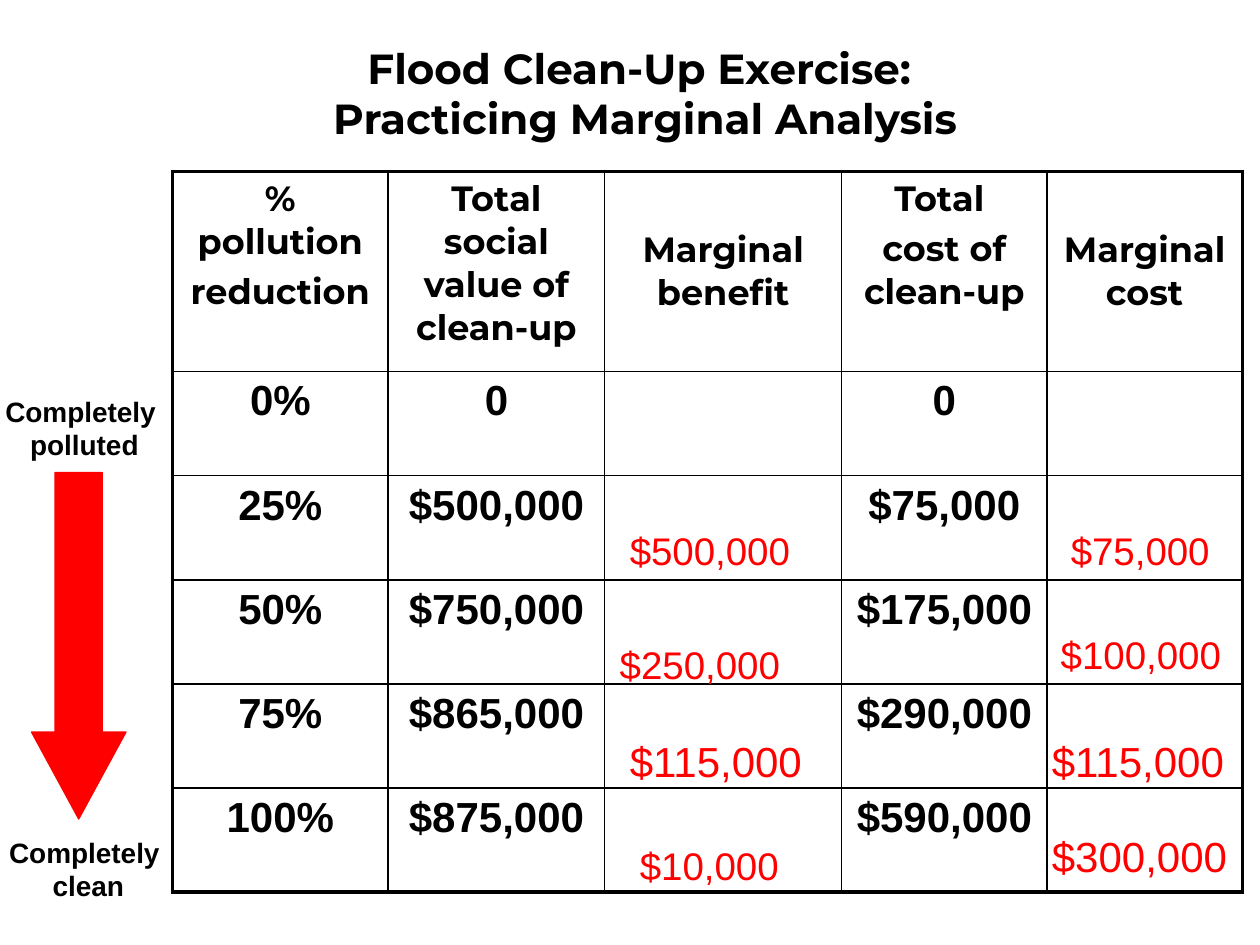
from lxml.etree import SubElement
from pptx import Presentation
from pptx.dml.color import RGBColor
from pptx.enum.shapes import MSO_SHAPE
from pptx.enum.text import MSO_ANCHOR, PP_ALIGN
from pptx.oxml.ns import qn
from pptx.util import Inches, Pt

BLACK = RGBColor(0, 0, 0)
RED = RGBColor(255, 0, 0)

TITLE = ["Flood Clean-Up Exercise: ", "Practicing Marginal Analysis"]
HEADERS = [
    (["% pollution", "reduction"], MSO_ANCHOR.TOP),
    (["Total social value of clean-up"], MSO_ANCHOR.TOP),
    (["Marginal benefit"], MSO_ANCHOR.MIDDLE),
    (["Total ", "cost of clean-up"], MSO_ANCHOR.TOP),
    (["Marginal cost"], MSO_ANCHOR.MIDDLE),
]
ROWS = [
    ("0%", "0", "", "0", ""),
    ("25%", "$500,000", "", "$75,000", ""),
    ("50%", "$750,000", "", "$175,000", ""),
    ("75%", "$865,000", "", "$290,000", ""),
    ("100%", "$875,000", "", "$590,000", ""),
]
COLUMN_WIDTHS = [1.71, 1.72, 1.88, 1.63, 1.55]
TABLE_LEFT, TABLE_TOP, TABLE_HEIGHT = 1.37, 1.36, 5.72
HEADER_HEIGHT = 1.59
ROW_HEIGHT = (TABLE_HEIGHT - HEADER_HEIGHT) / len(ROWS)

SCALE_LABELS = [
    (["Completely ", "polluted"], -0.33, 3.08, 2),
    (["Completely", " clean"], -0.03, 6.58, 1.4),
]
MARGINAL_ANSWERS = [
    ("$500,000", 4.9, 4.13, 1.59, 22),
    ("$250,000", 4.82, 5.04, 1.59, 22),
    ("$115,000", 4.9, 5.79, 1.59, 24),
    ("$10,000", 4.98, 6.63, 1.41, 22),
    ("$75,000", 8.4, 4.13, 1.41, 22),
    ("$100,000", 8.32, 4.96, 1.59, 22),
    ("$115,000", 8.25, 5.79, 1.66, 24),
    ("$300,000", 8.25, 6.54, 1.74, 24),
]


def write(frame, lines, size, font="Arial", color=BLACK, bold=True,
          align=PP_ALIGN.CENTER, gap=0):
    frame.word_wrap = True
    for index, line in enumerate(lines):
        paragraph = frame.add_paragraph() if index else frame.paragraphs[0]
        paragraph.text = line
        paragraph.alignment = align
        if index and gap:
            paragraph.space_before = Pt(gap)
        paragraph.font.name = font
        paragraph.font.size = Pt(size)
        paragraph.font.bold = bold
        paragraph.font.color.rgb = color


def add_text(slide, lines, left, top, width, height, size, **style):
    box = slide.shapes.add_textbox(
        Inches(left), Inches(top), Inches(width), Inches(height))
    write(box.text_frame, lines, size, **style)
    return box


def set_borders(cell, outer_edges):
    properties = cell._tc.get_or_add_tcPr()
    for position, (side, is_outer) in enumerate(zip("LRTB", outer_edges)):
        width = Pt(2.25 if is_outer else 1)
        line = properties.makeelement(qn(f"a:ln{side}"), {"w": str(width)})
        fill = SubElement(line, qn("a:solidFill"))
        SubElement(fill, qn("a:srgbClr"), val=str(BLACK))
        properties.insert(position, line)


def add_analysis_table(slide):
    row_count, column_count = len(ROWS) + 1, len(HEADERS)
    table = slide.shapes.add_table(
        row_count, column_count, Inches(TABLE_LEFT), Inches(TABLE_TOP),
        Inches(sum(COLUMN_WIDTHS)), Inches(TABLE_HEIGHT)).table
    table.first_row = False
    table.horz_banding = False
    for column, width in zip(table.columns, COLUMN_WIDTHS):
        column.width = Inches(width)
    for index, row in enumerate(table.rows):
        row.height = Inches(ROW_HEIGHT if index else HEADER_HEIGHT)

    for index, (lines, anchor) in enumerate(HEADERS):
        header = table.cell(0, index)
        write(header.text_frame, lines, 20, font="Montserrat", gap=4)
        header.vertical_anchor = anchor
    for row, values in enumerate(ROWS, 1):
        for column, value in enumerate(values):
            write(table.cell(row, column).text_frame, [value], 24)

    for row in range(row_count):
        for column in range(column_count):
            cell = table.cell(row, column)
            cell.fill.background()
            set_borders(cell, (column == 0, column == column_count - 1,
                               row == 0, row == row_count - 1))


def add_cleanup_arrow(slide):
    arrow = slide.shapes.add_shape(
        MSO_SHAPE.DOWN_ARROW, Inches(0.25), Inches(3.75), Inches(0.75), Inches(2.75))
    arrow.adjustments[0] = 0.5
    arrow.adjustments[1] = 0.92
    arrow.shadow.inherit = False
    arrow.fill.solid()
    arrow.fill.fore_color.rgb = RED
    arrow.line.color.rgb = RED
    arrow.line.width = Pt(0.75)


def main():
    presentation = Presentation()
    presentation.slide_width = Inches(10)
    presentation.slide_height = Inches(7.5)
    slide = presentation.slides.add_slide(presentation.slide_layouts[6])

    add_analysis_table(slide)
    for lines, left, top, width in SCALE_LABELS:
        add_text(slide, lines, left, top, width, 0.64, 16)
    add_cleanup_arrow(slide)
    for amount, left, top, width, size in MARGINAL_ANSWERS:
        add_text(slide, [amount], left, top, width, 0.9, size,
                 color=RED, bold=False, align=PP_ALIGN.LEFT)
    title = add_text(slide, ["\v".join(TITLE)], 0.12, 0.11, 10, 1.25, 24,
                     font="Montserrat")
    title.text_frame.vertical_anchor = MSO_ANCHOR.MIDDLE

    presentation.save("out.pptx")


if __name__ == "__main__":
    main()
